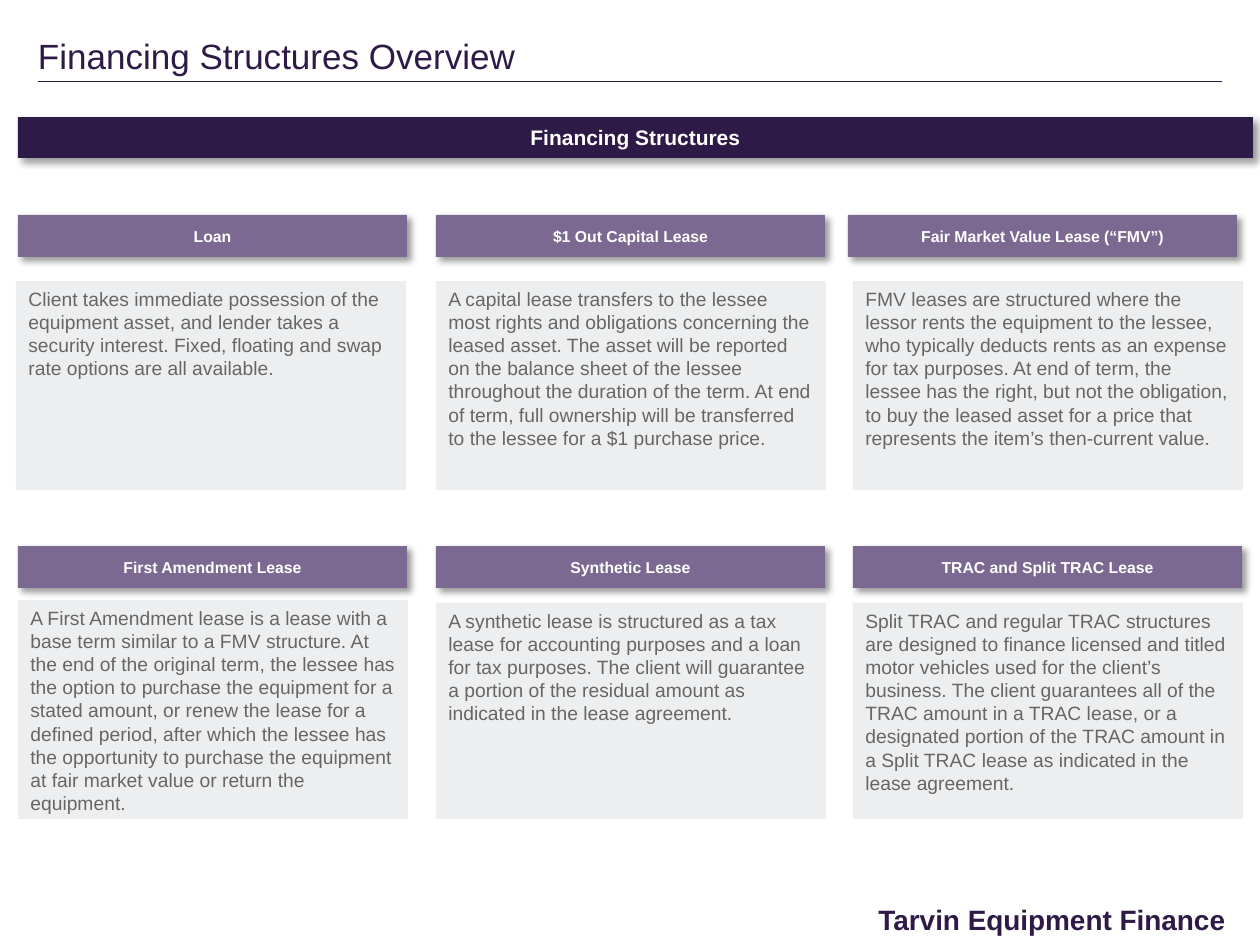
from lxml import etree
from pptx import Presentation
from pptx.dml.color import RGBColor
from pptx.enum.shapes import MSO_CONNECTOR, MSO_SHAPE
from pptx.enum.text import MSO_ANCHOR, PP_ALIGN
from pptx.oxml import parse_xml
from pptx.oxml.ns import nsdecls, qn
from pptx.util import Emu, Pt

EMU_PER_PX = 914400 / 126
COLORS = {
    "title": "2E1A47",
    "banner": "2D1A47",
    "header": "7C6992",
    "panel": "EDEEEF",
    "body": "666666",
    "white": "FFFFFF",
}
SHADOW = (
    f'<a:effectLst {nsdecls("a")}>'
    '<a:outerShdw blurRad="50800" dist="38100" dir="2700000" algn="tl" rotWithShape="0">'
    '<a:srgbClr val="000000"><a:alpha val="40000"/></a:srgbClr>'
    "</a:outerShdw></a:effectLst>"
)


def px(*lengths):
    return [Emu(round(length * EMU_PER_PX)) for length in lengths]


def add_text(box, text, size, color, bold=False, fill=None, header=False):
    """Write one paragraph in a box; a header is centred and casts a shadow."""
    frame = box.text_frame
    frame.word_wrap = True
    frame.vertical_anchor = MSO_ANCHOR.MIDDLE if header else MSO_ANCHOR.TOP
    paragraph = frame.paragraphs[0]
    paragraph.text = text
    paragraph.alignment = PP_ALIGN.CENTER if header else PP_ALIGN.LEFT
    paragraph.font.name = "Arial"
    paragraph.font.size = Pt(size)
    paragraph.font.bold = bold
    paragraph.font.color.rgb = RGBColor.from_string(COLORS[color])
    if fill:
        box.fill.solid()
        box.fill.fore_color.rgb = RGBColor.from_string(COLORS[fill])
        box.line.fill.background()
        box.shadow.inherit = False
    if header:
        properties = box._element.spPr
        properties.replace(properties.find(qn("a:effectLst")), parse_xml(SHADOW))
    return frame


presentation = Presentation()
presentation.slide_width, presentation.slide_height = px(1260, 945)
slide = presentation.slides.add_slide(presentation.slide_layouts[6])
shapes = slide.shapes

title = add_text(shapes.add_textbox(*px(38, 39, 1184, 38)),
                 "Financing Structures Overview", 20, "title")
title.margin_left = title.margin_right = title.margin_top = title.margin_bottom = 0
title.paragraphs[0].line_spacing = 0.9

title_rule = shapes.add_connector(MSO_CONNECTOR.STRAIGHT, *px(38, 81, 1222, 81))
title_rule.line.color.rgb = RGBColor.from_string(COLORS["title"])
title_rule.line.width = Pt(0.5)
etree.SubElement(title_rule._element.spPr, qn("a:effectLst"))

add_text(shapes.add_shape(MSO_SHAPE.RECTANGLE, *px(18, 117, 1235, 41)),
         "Financing Structures", 12, "white", True, "banner", header=True)

# Each row: header top, panel bottom, then its structures as
# (header left, panel left, panel top, name, description).
rows = [
    (215, 490, [
        (18, 16, 281, "Loan",
         "Client takes immediate possession of the equipment asset, and lender takes a "
         "security interest. Fixed, floating and swap rate options are all available."),
        (436, 436, 281, "$1 Out Capital Lease",
         "A capital lease transfers to the lessee most rights and obligations concerning "
         "the leased asset. The asset will be reported on the balance sheet of the lessee "
         "throughout the duration of the term. At end of term, full ownership will be "
         "transferred to the lessee for a $1 purchase price."),
        (848, 853, 281, "Fair Market Value Lease (“FMV”)",
         "FMV leases are structured where the lessor rents the equipment to the lessee, "
         "who typically deducts rents as an expense for tax purposes. At end of term, the "
         "lessee has the right, but not the obligation, to buy the leased asset for a "
         "price that represents the item’s then-current value."),
    ]),
    (546, 819, [
        (18, 18, 600, "First Amendment Lease",
         "A First Amendment lease is a lease with a base term similar to a FMV structure. "
         "At the end of the original term, the lessee has the option to purchase the "
         "equipment for a stated amount, or renew the lease for a defined period, after "
         "which the lessee has the opportunity to purchase the equipment at fair market "
         "value or return the equipment."),
        (436, 436, 603, "Synthetic Lease",
         "A synthetic lease is structured as a tax lease for accounting purposes and a "
         "loan for tax purposes. The client will guarantee a portion of the residual "
         "amount as indicated in the lease agreement."),
        (853, 853, 603, "TRAC and Split TRAC Lease",
         "Split TRAC and regular TRAC structures are designed to finance licensed and "
         "titled motor vehicles used for the client’s business. The client guarantees all "
         "of the TRAC amount in a TRAC lease, or a designated portion of the TRAC amount "
         "in a Split TRAC lease as indicated in the lease agreement."),
    ]),
]
for header_top, panel_bottom, structures in rows:
    for header_left, panel_left, panel_top, name, description in structures:
        header = shapes.add_shape(MSO_SHAPE.RECTANGLE, *px(header_left, header_top, 389, 42))
        add_text(header, name, 9, "white", True, "header", header=True)
        panel = shapes.add_shape(
            MSO_SHAPE.RECTANGLE, *px(panel_left, panel_top, 390, panel_bottom - panel_top))
        add_text(panel, description, 11, "body", fill="panel")

add_text(shapes.add_textbox(*px(866, 896, 394, 47)),
         "Tarvin Equipment Finance", 16, "title", True)

presentation.save("out.pptx")
